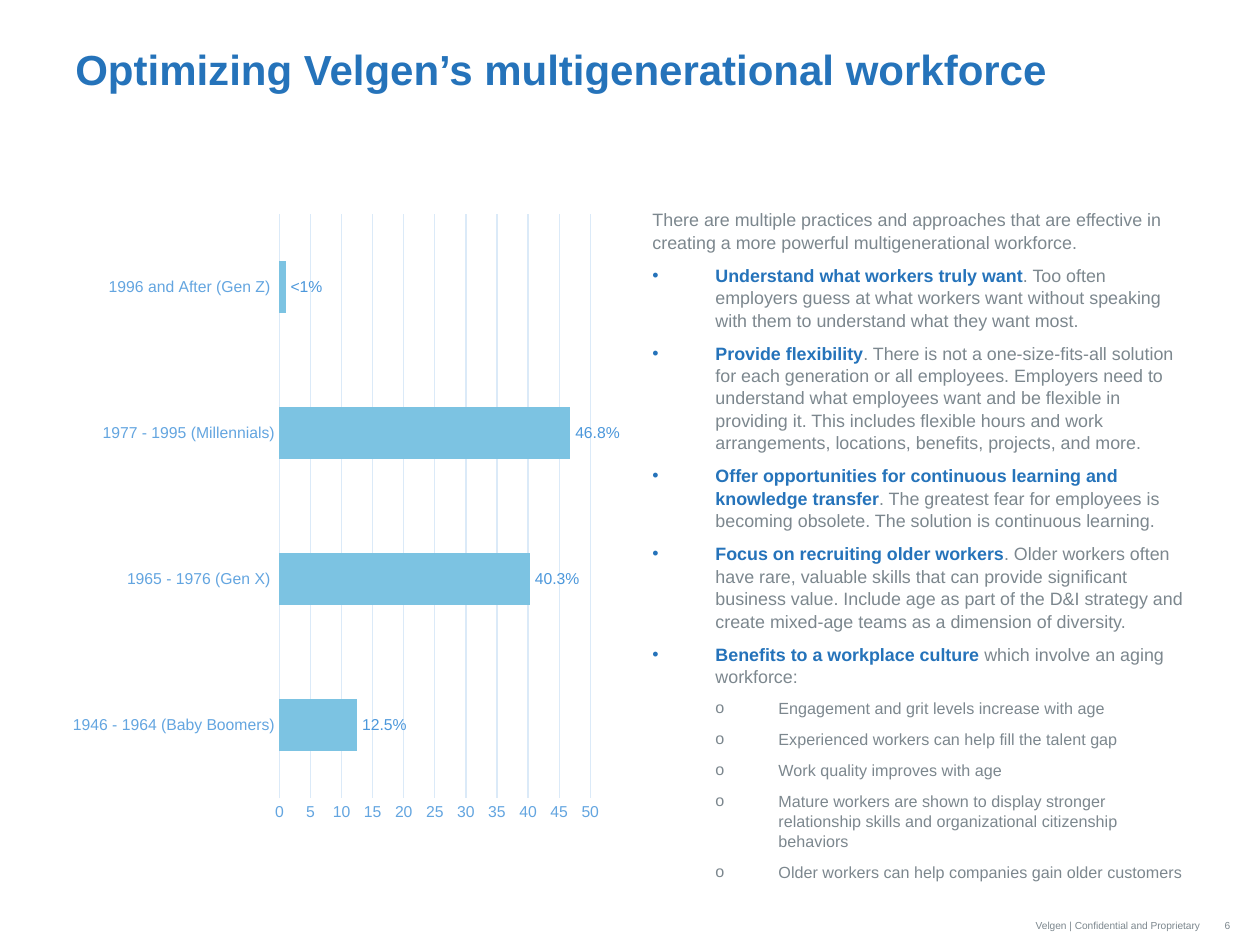
from lxml import etree
from pptx import Presentation
from pptx.chart.data import CategoryChartData
from pptx.dml.color import RGBColor
from pptx.enum.chart import XL_CHART_TYPE as ChartType, XL_LABEL_POSITION as LabelPos
from pptx.enum.chart import XL_TICK_MARK as TickMark
from pptx.enum.text import MSO_ANCHOR as Anchor, PP_ALIGN as Align
from pptx.oxml import parse_xml
from pptx.oxml.ns import nsdecls, qn
from pptx.util import Inches, Pt

BLUE, GREY, PALE = "2573BA", "7C878E", "DBEAF8"
AXIS_BLUE, LABEL_BLUE, BAR_BLUE = "63A5E0", "4B97DB", "7CC3E2"

INTRO = ("There are multiple practices and approaches that are effective in "
         "creating a more powerful multigenerational workforce.")
PRACTICES = [
    ("Understand what workers truly want",
     ". Too often employers guess at what workers want without speaking with "
     "them to understand what they want most."),
    ("Provide flexibility",
     ". There is not a one-size-fits-all solution for each generation or all "
     "employees. Employers need to understand what employees want and be "
     "flexible in providing it. This includes flexible hours and work "
     "arrangements, locations, benefits, projects, and more."),
    ("Offer opportunities for continuous learning and knowledge transfer",
     ". The greatest fear for employees is becoming obsolete. The solution is "
     "continuous learning."),
    ("Focus on recruiting older workers",
     ". Older workers often have rare, valuable skills that can provide "
     "significant business value. Include age as part of the D&I strategy and "
     "create mixed-age teams as a dimension of diversity."),
    ("Benefits to a workplace culture ", "which involve an aging workforce:"),
]
BENEFITS = [
    "Engagement and grit levels increase with age",
    "Experienced workers can help fill the talent gap",
    "Work quality improves with age",
    "Mature workers are shown to display stronger relationship skills and "
    "organizational citizenship behaviors",
    "Older workers can help companies gain older customers",
]
GENERATIONS = [
    ("1946 - 1964 (Baby Boomers)", 12.5, "12.5%"),
    ("1965 - 1976 (Gen X) ", 40.3, "40.3%"),
    ("1977 - 1995 (Millennials)", 46.8, "46.8%"),
    ("1996 and After (Gen Z) ", 1, "<1%"),
]


def rgb(color):
    return RGBColor.from_string(color)


def set_font(font, size, color, bold=False):
    font.name = "Arial"
    font.size = Pt(size)
    font.bold = bold
    font.color.rgb = rgb(color)


def add_text_frame(slide, left, top, width, height, anchor=Anchor.TOP):
    box = slide.shapes.add_textbox(
        Inches(left), Inches(top), Inches(width), Inches(height))
    frame = box.text_frame
    frame.word_wrap = True
    frame.vertical_anchor = anchor
    return frame


def add_title(slide, text):
    title = add_text_frame(slide, 0.5, 0.26, 9, 1.25).paragraphs[0]
    title.text = text
    title.line_spacing = 1.1
    set_font(title.font, 24, BLUE, bold=True)


def add_footer(slide, text, left, width, align):
    footer = add_text_frame(slide, left, 7.1, width, 0.4, Anchor.BOTTOM).paragraphs[0]
    footer.alignment = align
    run = footer.add_run()
    run.text = text
    set_font(footer.font, 10, GREY)
    # Raised small print
    run._r.get_or_add_rPr().set("baseline", "30000")


def add_bullet(paragraph, char, level):
    props = paragraph._p.get_or_add_pPr()
    props.set("marL", str(Inches(0.5 * (level + 1))))
    props.set("indent", str(Inches(-0.5)))
    etree.SubElement(props, qn("a:buFont")).set("typeface", "Arial")
    etree.SubElement(props, qn("a:buChar")).set("char", char)
    paragraph.level = level


def add_body_paragraph(frame, parts, size, bullet=None, level=0):
    """Write (text, is_lead) parts as one paragraph; leads are bold blue."""
    first = not frame.paragraphs[0].runs
    paragraph = frame.paragraphs[0] if first else frame.add_paragraph()
    if bullet:
        add_bullet(paragraph, bullet, level)
    paragraph.line_spacing = 1.05
    paragraph.space_before = Pt(0 if first else 3)
    paragraph.space_after = Pt(3)
    set_font(paragraph.font, size, GREY)
    for text, is_lead in parts:
        run = paragraph.add_run()
        run.text = text
        if is_lead:
            run.font.bold = True
            run.font.color.rgb = rgb(BLUE)


def add_practices(slide):
    frame = add_text_frame(slide, 5.08, 1.6, 4.42, 5.04)
    add_body_paragraph(frame, [(INTRO, False)], 10.2)
    for lead, detail in PRACTICES:
        add_body_paragraph(frame, [(lead, True), (detail, False)], 10.2, "•")
    for benefit in BENEFITS:
        add_body_paragraph(frame, [(benefit, False)], 9.2, "o", level=1)


def style_axis(axis):
    axis.major_tick_mark = axis.minor_tick_mark = TickMark.NONE
    set_font(axis.tick_labels.font, 9, AXIS_BLUE)


def set_line(line, color):
    line.color.rgb = rgb(color)
    line.width = Pt(0.75)


def place_plot(chart, **fractions):
    """Fix the inner plot area as fractions of the chart frame."""
    sizes = "".join(f'<c:{key} val="{value}"/>' for key, value in fractions.items())
    layout = parse_xml(
        f'<c:layout {nsdecls("c")}><c:manualLayout><c:layoutTarget val="inner"/>'
        f'<c:xMode val="edge"/><c:yMode val="edge"/>{sizes}'
        '</c:manualLayout></c:layout>')
    plot_area = chart._chartSpace.chart.plotArea
    for old in plot_area.findall(qn("c:layout")):
        plot_area.remove(old)
    plot_area.insert(0, layout)


def add_generation_chart(slide):
    data = CategoryChartData()
    data.categories = [name for name, _, _ in GENERATIONS]
    data.add_series("Series 1", [share for _, share, _ in GENERATIONS])
    chart = slide.shapes.add_chart(
        ChartType.BAR_CLUSTERED, Inches(0.5), Inches(1.6),
        Inches(4.42), Inches(5.04), data).chart
    chart.has_legend = chart.has_title = False
    set_font(chart.font, 10, BLUE)
    place_plot(chart, x=0.39, y=0.02, w=0.56, h=0.92)

    # Axes
    generations, shares = chart.category_axis, chart.value_axis
    style_axis(generations)
    style_axis(shares)
    set_line(generations.format.line, PALE)
    shares.format.line.fill.background()
    shares.minimum_scale, shares.maximum_scale, shares.major_unit = 0, 50, 5
    shares.has_major_gridlines = True
    set_line(shares.major_gridlines.format.line, PALE)

    # Bars and their labels
    plot = chart.plots[0]
    plot.gap_width = 182
    plot.vary_by_categories = False
    bars = plot.series[0]
    bars.format.fill.solid()
    bars.format.fill.fore_color.rgb = rgb(BAR_BLUE)
    bars.data_labels.show_value = True
    set_font(bars.data_labels.font, 9, LABEL_BLUE)
    for index, (_, _, label_text) in enumerate(GENERATIONS):
        label = bars.points[index].data_label
        run = label.text_frame.paragraphs[0].add_run()
        run.text = label_text
        set_font(run.font, 9, LABEL_BLUE)
        label.position = LabelPos.OUTSIDE_END


def main():
    deck = Presentation()
    deck.slide_width, deck.slide_height = Inches(10), Inches(7.5)
    slide = deck.slides.add_slide(deck.slide_layouts[6])
    add_footer(slide, "6", 9.62, 0.38, Align.LEFT)
    add_footer(slide, "Velgen | Confidential and Proprietary", 6.45, 3.17, Align.RIGHT)
    add_title(slide, "Optimizing Velgen’s multigenerational workforce")
    add_practices(slide)
    add_generation_chart(slide)
    deck.save("out.pptx")


if __name__ == "__main__":
    main()
